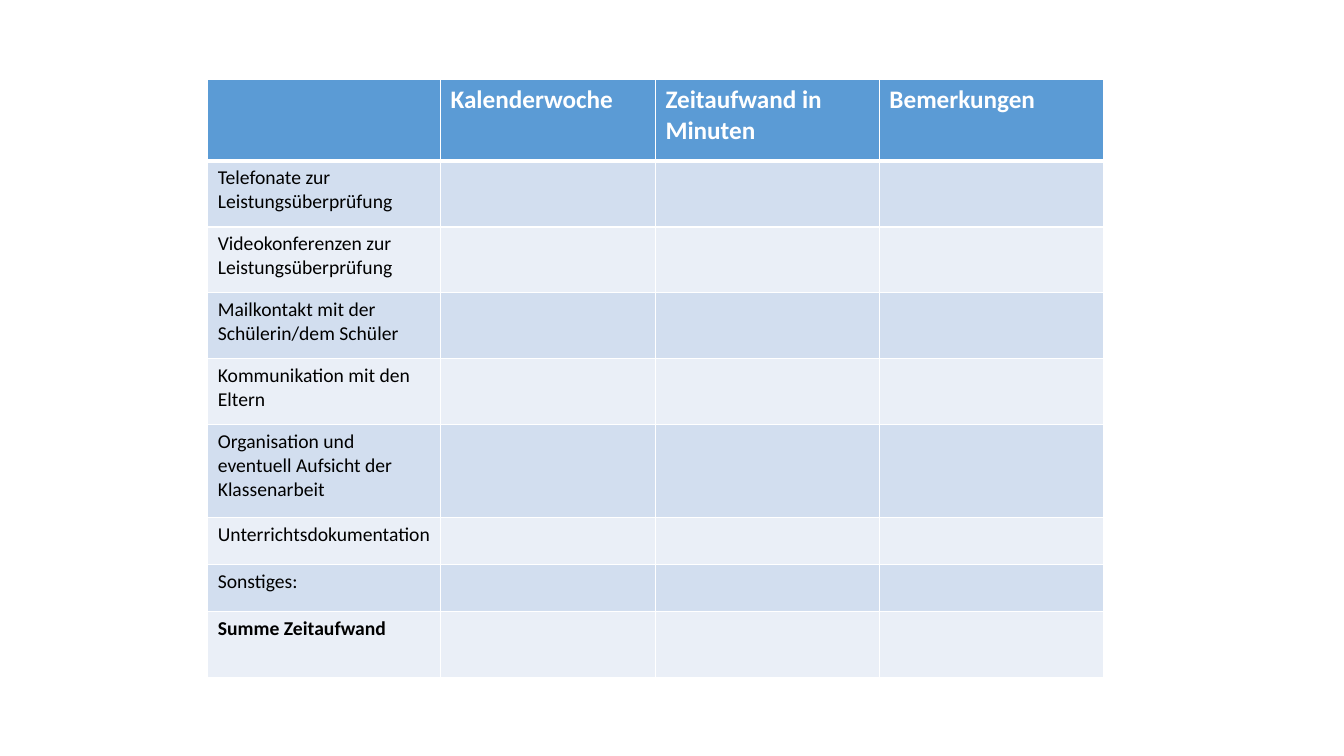
"""Build a slide with a table for recording time spent on assessments."""
from dataclasses import dataclass

from lxml import etree
from pptx import Presentation
from pptx import util as u
from pptx.dml import color
from pptx.oxml import ns


@dataclass(frozen=True)
class Theme:
    """Colours, font and type sizes of the slide."""
    font: str = "Calibri"
    header_size: int = 18
    body_size: int = 14
    white: str = "FFFFFF"
    black: str = "000000"
    header_fill: str = "5B9BD5"
    band_fills: tuple = ("D2DEEF", "EAEFF7")
    thin_line: int = 1
    thick_line: int = 3


THEME = Theme()
HEADERS = ("", "Kalenderwoche", "Zeitaufwand in Minuten", "Bemerkungen")
TASKS = (
    ("Telefonate zur Leistungsüberprüfung", 47.1),
    ("Videokonferenzen zur Leistungsüberprüfung", 47.1),
    ("Mailkontakt mit der Schülerin/dem Schüler", 47.1),
    ("Kommunikation mit den Eltern", 47.1),
    ("Organisation und eventuell Aufsicht der Klassenarbeit", 66.4),
    ("Unterrichtsdokumentation", 33.5),
    ("Sonstiges:", 33.5),
    ("Summe Zeitaufwand", 47.1),
)
HEADER_HEIGHT = 58
COLUMN_WIDTHS = (166.3, 153.5, 160, 160)
TABLE_LEFT, TABLE_TOP = 148.4, 57


def write_text(cell, content, *, size, colour, bold=False):
    """Write formatted text into a table cell."""
    run = cell.text_frame.paragraphs[0].add_run()
    run.text = content
    run.font.name = THEME.font
    run.font.size = u.Pt(size)
    run.font.bold = bold
    run.font.color.rgb = color.RGBColor.from_string(colour)


def draw_borders(cell, top, bottom):
    """Give a cell white borders with the given top and bottom widths."""
    properties = cell._tc.get_or_add_tcPr()
    widths = {"L": THEME.thin_line, "R": THEME.thin_line, "T": top, "B": bottom}
    for side, width in widths.items():
        line = etree.SubElement(properties, ns.qn(f"a:ln{side}"), w=str(u.Pt(width)))
        fill = etree.SubElement(line, ns.qn("a:solidFill"))
        etree.SubElement(fill, ns.qn("a:srgbClr"), val=THEME.white)


def style_row(table, index, height, fill):
    """Set the height, borders and fill of one table row."""
    row = table.rows[index]
    row.height = u.Pt(height)
    top = THEME.thick_line if index == 1 else THEME.thin_line
    bottom = THEME.thick_line if index == 0 else THEME.thin_line
    for cell in row.cells:
        draw_borders(cell, top, bottom)
        cell.fill.solid()
        cell.fill.fore_color.rgb = color.RGBColor.from_string(fill)


def add_time_table(slide):
    """Add the table of tasks and time spent."""
    height = HEADER_HEIGHT + sum(row_height for _, row_height in TASKS)
    table = slide.shapes.add_table(
        len(TASKS) + 1, len(HEADERS), u.Pt(TABLE_LEFT), u.Pt(TABLE_TOP),
        u.Pt(sum(COLUMN_WIDTHS)), u.Pt(height)).table
    for column, width in zip(table.columns, COLUMN_WIDTHS):
        column.width = u.Pt(width)

    style_row(table, 0, HEADER_HEIGHT, THEME.header_fill)
    for column_index, header in enumerate(HEADERS):
        if header:
            write_text(table.cell(0, column_index), header,
                       size=THEME.header_size, colour=THEME.white, bold=True)

    for index, (task, row_height) in enumerate(TASKS, start=1):
        style_row(table, index, row_height, THEME.band_fills[(index - 1) % 2])
        write_text(table.cell(index, 0), task, size=THEME.body_size,
                   colour=THEME.black, bold=index == len(TASKS))


def main():
    """Create and save the presentation."""
    presentation = Presentation()
    presentation.slide_width = u.Pt(960)
    presentation.slide_height = u.Pt(540)
    slide = presentation.slides.add_slide(presentation.slide_layouts[6])
    add_time_table(slide)
    presentation.save("out.pptx")


if __name__ == "__main__":
    main()
